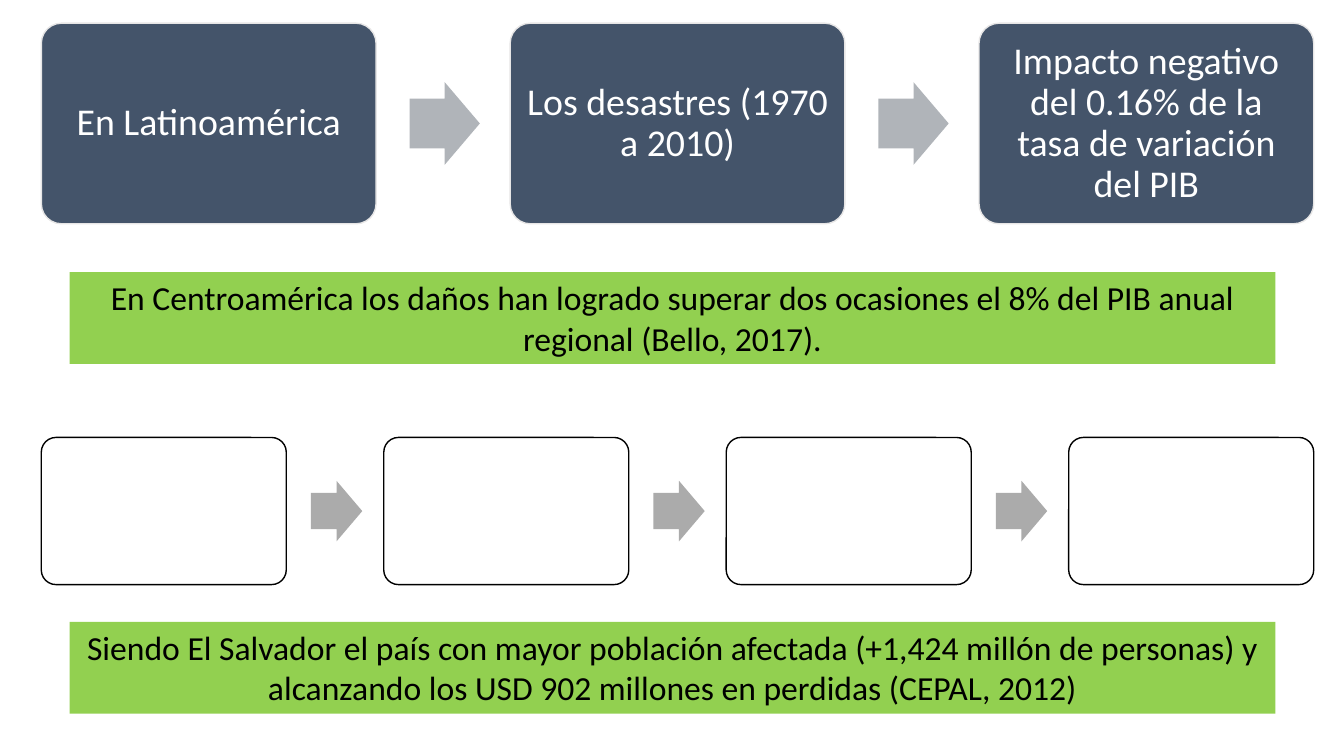
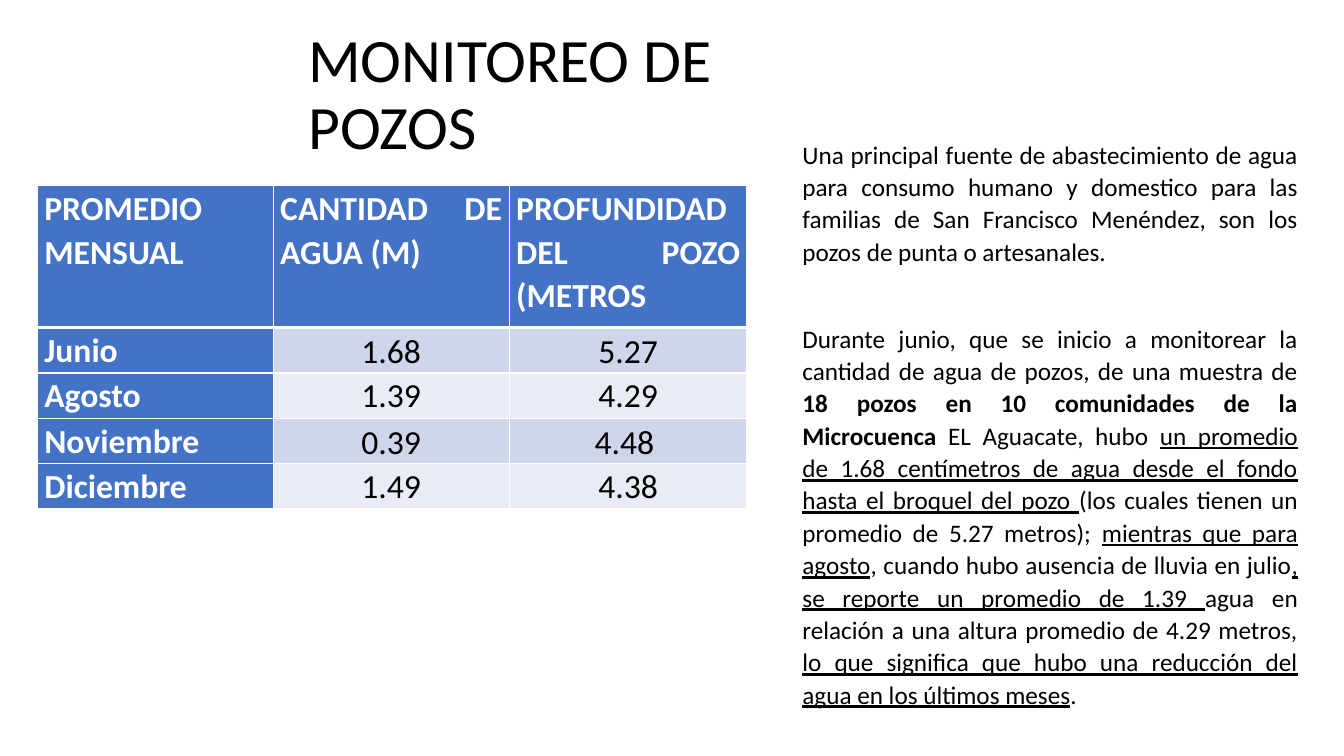
from pptx import Presentation
from pptx.dml.color import RGBColor
from pptx.enum.shapes import MSO_SHAPE as SHAPE
from pptx.enum.text import MSO_ANCHOR as ANCHOR, PP_ALIGN as ALIGN
from pptx.oxml import parse_xml
from pptx.oxml.ns import nsdecls
from pptx.util import Pt

PX = 9144
FONT = "Calibri"
COLORS = {
    "black": "000000", "white": "FFFFFF", "slate": "44546A", "edge": "E7E6E6",
    "slate_arrow": "B0B4B9", "gray_arrow": "ABABAB", "green": "92D050",
    "blue": "4472C4", "band_dark": "CFD5EA", "band_light": "E9EBF5",
}

FLOW_LEFT, FLOW_RIGHT = 41, 1303
FLOWS = [
    {"top": 23, "size": (332, 199), "fill": "slate", "line": "edge", "arrow": "slate_arrow",
     "texts": ["En Latinoamérica", "Los desastres (1970 a 2010)",
               "Impacto negativo del 0.16% de la tasa de variación del PIB"]},
    {"top": 434, "size": (243, 146), "fill": "white", "line": "black", "arrow": "gray_arrow",
     "texts": ["", "", "", ""]},
]
BANDS = [
    (270, "En Centroamérica los daños han logrado superar dos ocasiones el 8% del PIB anual "
          "regional (Bello, 2017)."),
    (617, "Siendo El Salvador el país con mayor población afectada (+1,424 millón de personas) y "
          "alcanzando los USD 902 millones en perdidas (CEPAL, 2012)"),
]

TITLE = "MONITOREO DE POZOS"
TABLE = [
    ("PROMEDIO MENSUAL", "CANTIDAD DE AGUA (M)", "PROFUNDIDAD DEL POZO (METROS"),
    ("Junio", "1.68", "5.27"),
    ("Agosto", "1.39", "4.29"),
    ("Noviembre", "0.39", "4.48 "),
    ("Diciembre", "1.49", "4.38"),
]
COL_WIDTHS = [234, 234, 236]
ROW_HEIGHTS = [141, 45, 45, 45, 45]
BODY = [
    (39, [("Una principal fuente de abastecimiento de agua para consumo humano y domestico para las "
           "familias de San Francisco Menéndez, son los pozos de punta o artesanales.", "")]),
    (8, [
        ("Durante junio, que se inicio a monitorear la cantidad de agua de pozos, de una muestra de ", ""),
        ("18 pozos en 10 comunidades de la Microcuenca ", "b"),
        ("EL Aguacate, hubo ", ""),
        ("un promedio de 1.68 centímetros de agua desde el fondo hasta el broquel del pozo ", "u"),
        ("(los cuales tienen un promedio de 5.27 metros); ", ""),
        ("mientras que para agosto", "u"),
        (", cuando hubo ausencia de lluvia en julio", ""),
        (", se reporte un promedio de 1.39 ", "u"),
        ("agua en relación a una altura promedio de 4.29 metros, ", ""),
        ("lo que significa que hubo una reducción del agua en los últimos meses", "u"),
        (".", ""),
    ]),
]


def px(*values):
    return [round(v * PX) for v in values]


def rgb(name):
    return RGBColor.from_string(COLORS[name])


def add_run(p, text, size, color="black", style=""):
    r = p.add_run()
    r.text = text
    r.font.name, r.font.size = FONT, Pt(size)
    r.font.color.rgb = rgb(color)
    r.font.bold, r.font.underline = "b" in style, "u" in style


def add_box(s, kind, box, fill, line=None):
    sp = s.shapes.add_shape(kind, *px(*box))
    sp.shadow.inherit = False
    sp.fill.solid()
    sp.fill.fore_color.rgb = rgb(fill)
    if line:
        sp.line.color.rgb = rgb(line)
        sp.line.width = Pt(1)
    else:
        sp.line.fill.background()
    return sp


def add_text(s, box):
    tf = s.shapes.add_textbox(*px(*box)).text_frame
    tf.word_wrap = True
    return tf


def add_flow(s, flow):
    w, h = flow["size"]
    count = len(flow["texts"])
    pitch = (FLOW_RIGHT - FLOW_LEFT - w) / (count - 1)
    arrow_w, arrow_h = 0.21 * w, 0.247 * w
    for i, text in enumerate(flow["texts"]):
        x = FLOW_LEFT + i * pitch
        sp = add_box(s, SHAPE.ROUNDED_RECTANGLE, (x, flow["top"], w, h), flow["fill"], flow["line"])
        sp.adjustments[0] = 0.1
        if text:
            tf = sp.text_frame
            tf.word_wrap = True
            tf.vertical_anchor = ANCHOR.MIDDLE
            tf.margin_left = tf.margin_right = tf.margin_top = tf.margin_bottom = 11 * PX
            p = tf.paragraphs[0]
            p.alignment, p.line_spacing = ALIGN.CENTER, 0.9
            add_run(p, text, 27, "white")
        if i < count - 1:
            arrow_y = flow["top"] + (h - arrow_h) / 2
            arrow = add_box(s, SHAPE.RIGHT_ARROW, (x + 1.1 * w, arrow_y, arrow_w, arrow_h), flow["arrow"])
            arrow.adjustments[0], arrow.adjustments[1] = 0.6, 0.5


def add_band(s, top, text):
    tf = add_box(s, SHAPE.RECTANGLE, (69, top, 1196, 91), "green").text_frame
    tf.word_wrap = True
    tf.vertical_anchor = ANCHOR.TOP
    p = tf.paragraphs[0]
    p.alignment = ALIGN.CENTER
    add_run(p, text, 24)


def set_borders(cell, widths):
    for i, (side, width) in enumerate(widths.items()):
        ln = parse_xml(f'<a:ln{side} {nsdecls("a")} w="{Pt(width)}"><a:solidFill>'
                       f'<a:srgbClr val="{COLORS["white"]}"/></a:solidFill></a:ln{side}>')
        cell._tc.get_or_add_tcPr().insert(i, ln)


def fill_cell(cell, row, col, text):
    heading = row == 0 or col == 0
    shaded = row % 2 == 1
    cell.fill.solid()
    cell.fill.fore_color.rgb = rgb("blue" if heading else "band_dark" if shaded else "band_light")
    cell.margin_left = cell.margin_right = 7 * PX
    cell.margin_top = cell.margin_bottom = 0
    cell.vertical_anchor = ANCHOR.BOTTOM if shaded and not heading else ANCHOR.TOP
    set_borders(cell, {"L": 1, "R": 1, "T": 3 if row == 1 else 1, "B": 3 if row == 0 else 1})
    p = cell.text_frame.paragraphs[0]
    p.alignment = ALIGN.JUSTIFY if heading else ALIGN.CENTER
    p.line_spacing = 1.07
    add_run(p, text, 24, "white" if heading else "black", "b" if heading else "")


def add_wells_table(s):
    box = px(37, 184, sum(COL_WIDTHS), sum(ROW_HEIGHTS))
    table = s.shapes.add_table(len(TABLE), len(COL_WIDTHS), *box).table
    table.first_col = True
    for column, width in zip(table.columns, COL_WIDTHS):
        column.width = width * PX
    for row, height in zip(table.rows, ROW_HEIGHTS):
        row.height = height * PX
    for i, texts in enumerate(TABLE):
        for j, text in enumerate(texts):
            fill_cell(table.cell(i, j), i, j, text)


def build_impact(s):
    for flow in FLOWS:
        add_flow(s, flow)
    for top, text in BANDS:
        add_band(s, top, text)


def build_wells(s):
    add_wells_table(s)
    tf = add_text(s, (786, 131, 511, 582))
    for i, (space_after, runs) in enumerate(BODY):
        p = tf.add_paragraph() if i else tf.paragraphs[0]
        p.alignment, p.line_spacing, p.space_after = ALIGN.JUSTIFY, 1.07, Pt(space_after)
        for text, style in runs:
            add_run(p, text, 18, style=style)
    tf = add_text(s, (296, 36, 596, 119))
    tf.vertical_anchor = ANCHOR.MIDDLE
    p = tf.paragraphs[0]
    p.line_spacing = 0.9
    add_run(p, TITLE, 44)


def main():
    prs = Presentation()
    prs.slide_width, prs.slide_height = px(1333, 750)
    for build in (build_impact, build_wells):
        build(prs.slides.add_slide(prs.slide_layouts[6]))
    prs.save("out.pptx")


if __name__ == "__main__":
    main()
